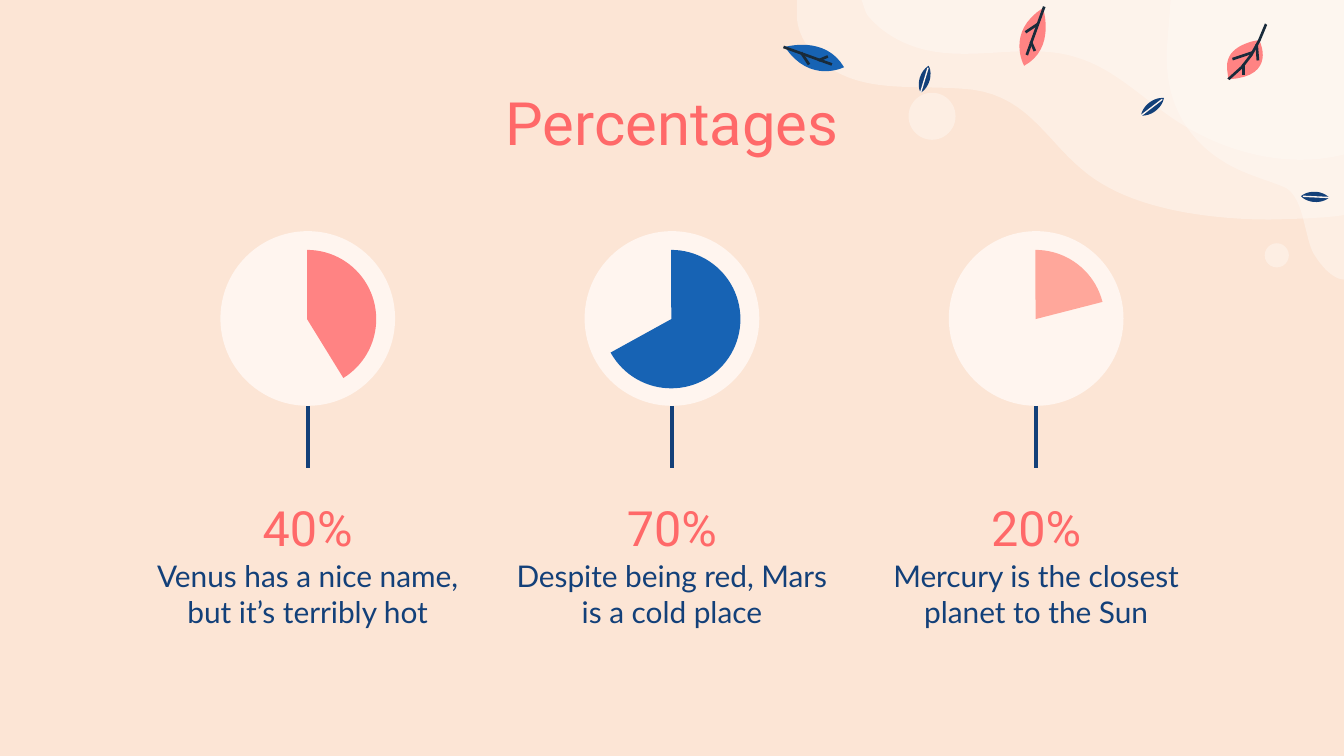
import dataclasses
import typing

import lxml.etree
import pptx
import pptx.dml.color
import pptx.enum.shapes
import pptx.enum.text
import pptx.oxml.ns
import pptx.util

RGB = pptx.dml.color.RGBColor.from_string
Shape = pptx.enum.shapes.MSO_SHAPE
Anchor = pptx.enum.text.MSO_ANCHOR
qn = pptx.oxml.ns.qn

# Lengths are counted in tenths of the slide's width, both across and down.
COLUMNS = 10
ROWS = COLUMNS * 9 / 16
COLUMN = pptx.util.Inches(1)


@dataclasses.dataclass(frozen=True)
class Theme:
    backdrop: str = "FCE5D5"
    cloud: str = "FFFAF6"
    cloud_opacity: int = 45
    cream: str = "FFF5EF"
    coral: str = "FF6969"
    rose: str = "FF8383"
    peach: str = "FFA79B"
    blue: str = "1763B4"
    navy: str = "134079"
    bark: str = "192B3B"
    heading: str = "Roboto"
    body: str = "Lato"
    title_size: int = 32
    figure_size: int = 26
    caption_size: int = 16
    stem_width: float = 2.25


THEME = Theme()


class Planet(typing.NamedTuple):
    figure: str
    caption: str
    end_angle: float
    color: str


class Outline(typing.NamedTuple):
    """A start, cubic curves of two handles and an end, then straight corners."""
    start: complex
    curves: tuple
    corners: tuple = ()


class Leaf(typing.NamedTuple):
    color: str
    outline: Outline
    veins: tuple


PLANETS = (
    Planet("40%", "Venus has a nice name, but it’s terribly hot", 58.3, THEME.rose),
    Planet("70%", "Despite being red, Mars is a cold place", 151.1, THEME.blue),
    Planet("20%", "Mercury is the closest planet to the Sun", 345.6, THEME.peach),
)

CLOUDS = (
    Outline(5.93 + 0.07j, (
        (5.93 + 0.1j, 5.93 + 0.13j, 5.93 + 0.14j),
        (5.95 + 0.33j, 6.11 + 0.51j, 6.35 + 0.59j),
        (6.59 + 0.67j, 6.88 + 0.64j, 7.15 + 0.66j),
        (7.63 + 0.68j, 7.77 + 1.03j, 8.05 + 1.26j),
        (8.29 + 1.47j, 8.66 + 1.57j, 9.02 + 1.61j),
        (9.2 + 1.63j, 9.39 + 1.64j, 9.58 + 1.63j),
        (9.63 + 1.63j, 9.9 + 1.62j, 10 + 1.6j)), (10 + 0j, 5.93 + 0j)),
    Outline(8.68 + 0.39j, (
        (8.68 + 0.5j, 8.69 + 0.61j, 8.72 + 0.71j),
        (8.78 + 0.92j, 8.92 + 1.09j, 9.1 + 1.2j),
        (9.24 + 1.29j, 9.4 + 1.33j, 9.55 + 1.39j),
        (9.7 + 1.45j, 9.7 + 1.74j, 9.77 + 1.88j),
        (9.84 + 2j, 9.93 + 2.08j, 10 + 2.08j)), (10 + 0j, 8.71 + 0j)),
    Outline(6.41 + 0j, (
        (6.42 + 0.02j, 6.44 + 0.1j, 6.46 + 0.12j),
        (6.57 + 0.25j, 6.72 + 0.33j, 6.88 + 0.37j),
        (7.25 + 0.46j, 7.66 + 0.31j, 8.02 + 0.43j),
        (8.28 + 0.51j, 8.48 + 0.71j, 8.71 + 0.87j),
        (9.08 + 1.13j, 9.57 + 1.26j, 10 + 1.15j)), (10 + 0j,)),
)
BUBBLES = ((6.76, 0.69, 0.35), (9.41, 1.81, 0.18))

LEAVES = (
    Leaf(THEME.rose, Outline(7.76 + 0.06j, (
        (7.76 + 0.06j, 7.86 + 0.36j, 7.62 + 0.49j),
        (7.62 + 0.49j, 7.48 + 0.24j, 7.76 + 0.06j))),
        ((7.77 + 0.05j, 7.64 + 0.41j), (7.72 + 0.18j, 7.63 + 0.24j),
         (7.67 + 0.31j, 7.7 + 0.38j))),
    Leaf(THEME.rose, Outline(9.37 + 0.3j, (
        (9.37 + 0.3j, 9.51 + 0.57j, 9.14 + 0.59j),
        (9.14 + 0.59j, 9.13 + 0.51j, 9.13 + 0.5j),
        (9.13 + 0.46j, 9.14 + 0.43j, 9.16 + 0.4j),
        (9.2 + 0.35j, 9.25 + 0.33j, 9.31 + 0.31j),
        (9.31 + 0.31j, 9.35 + 0.3j, 9.37 + 0.3j))),
        ((9.42 + 0.18j, 9.37 + 0.3j, 9.31 + 0.41j, 9.24 + 0.5j, 9.14 + 0.59j),
         (9.35 + 0.33j, 9.36 + 0.45j), (9.32 + 0.39j, 9.17 + 0.44j),
         (9.25 + 0.48j, 9.25 + 0.56j))),
    Leaf(THEME.blue, Outline(5.84 + 0.35j, (
        (5.84 + 0.35j, 6.14 + 0.26j, 6.28 + 0.5j),
        (6.28 + 0.5j, 6.03 + 0.63j, 5.84 + 0.35j))),
        ((5.83 + 0.35j, 6.19 + 0.48j), (5.96 + 0.39j, 6.02 + 0.48j),
         (6.09 + 0.45j, 6.16 + 0.42j))),
)

# A leaflet runs from 0 to 1 and is laid between two tips.
LEAFLET = Outline(0j, ((0.25 - 0.24j, 0.75 - 0.24j, 1 + 0j),
                       (0.75 + 0.24j, 0.25 + 0.24j, 0j)))
LEAFLET_TIPS = ((9.68 + 1.46j, 9.89 + 1.47j), (6.91 + 0.49j, 6.85 + 0.69j),
                (8.66 + 0.73j, 8.49 + 0.86j))


def length(columns: float) -> int:
    return round(columns * COLUMN)


def set_all(target, values: dict) -> None:
    for name, value in values.items():
        setattr(target, name, value)


def paint(shape, color: str):
    shape.shadow.inherit = False
    shape.fill.solid()
    shape.fill.fore_color.rgb = RGB(color)
    shape.line.fill.background()
    return shape


def paint_cloud(shape) -> None:
    paint(shape, THEME.cloud)
    color = shape.element.spPr.find(".//" + qn("a:srgbClr"))
    lxml.etree.SubElement(color, qn("a:alpha"), val=str(THEME.cloud_opacity * 1000))


def trace(outline: Outline, steps: int = 16) -> list[complex]:
    points = [outline.start]
    for first, second, end in outline.curves:
        start = points[-1]
        for step in range(1, steps + 1):
            t = step / steps
            points.append((1 - t) ** 3 * start + 3 * (1 - t) ** 2 * t * first
                          + 3 * (1 - t) * t ** 2 * second + t ** 3 * end)
    return points + list(outline.corners)


def ribbon(points: typing.Sequence[complex], width: float) -> list[complex]:
    """Widen a line of points into a closed band."""
    along = points[-1] - points[0]
    offset = along / abs(along) * 1j * width / 2
    return [p + offset for p in points] + [p - offset for p in reversed(points)]


def draw_polygon(shapes, points: list[complex]):
    start, *rest = [(length(p.real), length(p.imag)) for p in points]
    builder = shapes.build_freeform(*start)
    builder.add_line_segments(rest, close=True)
    return builder.convert_to_shape()


def draw_disc(shapes, kind, left: float, top: float, size: float):
    return shapes.add_shape(kind, *map(length, (left, top, size, size)))


def draw_leaf(shapes, leaf: Leaf) -> None:
    group = shapes.add_group_shape().shapes
    paint(draw_polygon(group, trace(leaf.outline)), leaf.color)
    for vein in leaf.veins:
        paint(draw_polygon(group, ribbon(vein, 0.02)), THEME.bark)


def draw_leaflet(shapes, tip: complex, base: complex) -> None:
    group = shapes.add_group_shape().shapes
    blade = [tip + p * (base - tip) for p in trace(LEAFLET)]
    paint(draw_polygon(group, blade), THEME.navy)
    paint(draw_polygon(group, ribbon((tip + (base - tip) * 0.07, base), 0.01)), THEME.cream)


def write(box, text: str, font: str, size: int, color: str, anchor) -> None:
    frame = box.text_frame
    inset = length(0.1)
    set_all(frame, dict(text=text, word_wrap=True, vertical_anchor=anchor,
                        auto_size=pptx.enum.text.MSO_AUTO_SIZE.NONE,
                        margin_left=inset, margin_right=inset,
                        margin_top=inset, margin_bottom=inset))
    paragraph = frame.paragraphs[0]
    paragraph.alignment = pptx.enum.text.PP_ALIGN.CENTER
    letters = paragraph.runs[0].font
    set_all(letters, dict(name=font, size=pptx.util.Pt(size)))
    letters.color.rgb = RGB(color)


def draw_planet(shapes, planet: Planet, center: float) -> None:
    paint(draw_disc(shapes, Shape.OVAL, center - 0.65, 1.72, 1.3), THEME.cream)
    share = paint(draw_disc(shapes, Shape.PIE, center - 0.52, 1.86, 1.03), planet.color)
    for index, angle in enumerate((270, planet.end_angle)):
        share.adjustments[index] = angle * 0.6  # 60000ths of a degree over 100000

    stem = shapes.add_connector(pptx.enum.shapes.MSO_CONNECTOR.STRAIGHT,
                                *map(length, (center, 3.02, center, 3.48)))
    stem.line.color.rgb = RGB(THEME.navy)
    stem.line.width = pptx.util.Pt(THEME.stem_width)
    lxml.etree.SubElement(stem.element.spPr, qn("a:effectLst"))

    figure, caption = (shapes.add_textbox(*map(length, (center - 1.27, top, 2.54, height)))
                       for top, height in ((3.69, 0.46), (4.05, 0.71)))
    write(figure, planet.figure, THEME.heading, THEME.figure_size, THEME.coral, Anchor.MIDDLE)
    write(caption, planet.caption, THEME.body, THEME.caption_size, THEME.navy, Anchor.TOP)


def main() -> None:
    deck = pptx.Presentation()
    set_all(deck, dict(slide_width=length(COLUMNS), slide_height=length(ROWS)))
    slide = deck.slides.add_slide(deck.slide_layouts.get_by_name("Title Only"))
    slide.background.fill.solid()
    slide.background.fill.fore_color.rgb = RGB(THEME.backdrop)
    shapes = slide.shapes

    for cloud in CLOUDS:
        paint_cloud(draw_polygon(shapes, trace(cloud)))
    for bubble in BUBBLES:
        paint_cloud(draw_disc(shapes, Shape.OVAL, *bubble))
    for leaf in LEAVES:
        draw_leaf(shapes, leaf)
    for tips in LEAFLET_TIPS:
        draw_leaflet(shapes, *tips)

    set_all(shapes.title, dict(left=length(0.78), top=length(0.59),
                               width=length(8.44), height=length(0.63)))
    write(shapes.title, "Percentages", THEME.heading, THEME.title_size,
          THEME.coral, Anchor.MIDDLE)
    for index, planet in enumerate(PLANETS):
        draw_planet(shapes, planet, COLUMNS / 2 + (index - 1) * 2.71)
    deck.save("out.pptx")


if __name__ == "__main__":
    main()
